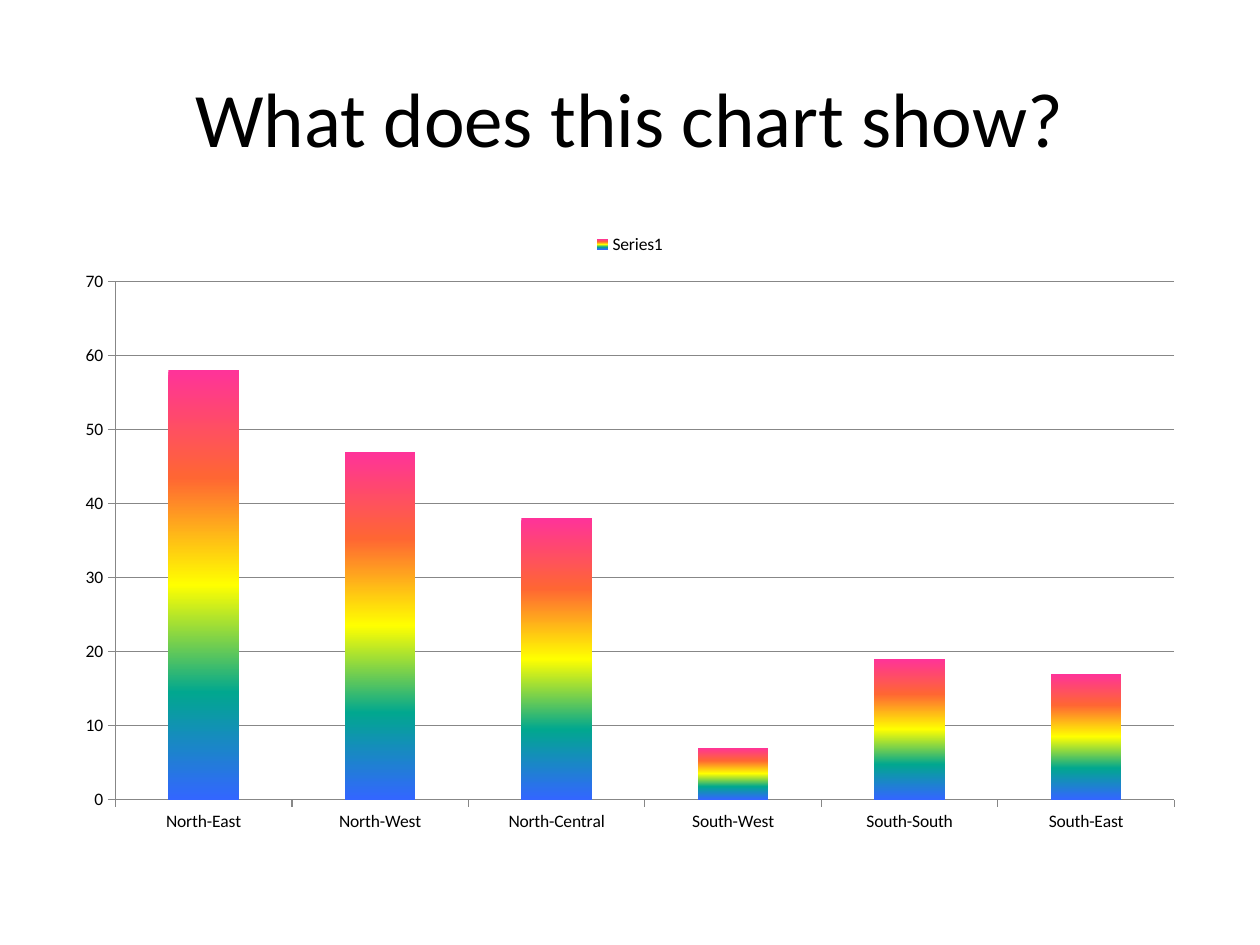
import pptx
import pptx.chart.data
import pptx.dml.color
import pptx.enum.chart
import pptx.enum.text
import pptx.oxml
import pptx.oxml.ns
import pptx.util
from pptx.util import Inches

FONT = "Calibri"
BLACK = "000000"
AXIS_GREY = "878787"
RAINBOW = ["FF3399", "FF6633", "FFFF00", "01A78F", "3366FF"]
REGION_VALUES = {
    "North-East": 58,
    "North-West": 47,
    "North-Central": 38,
    "South-West": 7,
    "South-South": 19,
    "South-East": 17,
}


def color(hex_string):
    return pptx.dml.color.RGBColor.from_string(hex_string)


def style_font(font, size):
    font.name = FONT
    font.size = pptx.util.Pt(size)
    font.color.rgb = color(BLACK)


def style_line(line):
    line.color.rgb = color(AXIS_GREY)
    line.width = pptx.util.Pt(0.75)


def fill_rainbow(series):
    fill = series.format.fill
    fill.gradient()
    fill.gradient_angle = 270
    stops = series._element.find(".//" + pptx.oxml.ns.qn("a:gsLst"))
    for stop in list(stops):
        stops.remove(stop)
    step = 100000 // (len(RAINBOW) - 1)
    for index, hex_string in enumerate(RAINBOW):
        stops.append(pptx.oxml.parse_xml(
            f'<a:gs {pptx.oxml.ns.nsdecls("a")} pos="{index * step}">'
            f'<a:srgbClr val="{hex_string}"/></a:gs>'
        ))


def place_title(slide, left, top, width, height):
    title = slide.shapes.title
    title.left, title.top, title.width, title.height = left, top, width, height
    title.text_frame.text = "What does this chart show?"
    title.text_frame.vertical_anchor = pptx.enum.text.MSO_ANCHOR.MIDDLE
    heading = title.text_frame.paragraphs[0]
    heading.alignment = pptx.enum.text.PP_ALIGN.CENTER
    style_font(heading.font, 44)


def place_region_chart(slide, left, top, width, height):
    region_data = pptx.chart.data.CategoryChartData()
    region_data.categories = list(REGION_VALUES)
    region_data.add_series("Series1", list(REGION_VALUES.values()))
    chart = slide.shapes.add_chart(
        pptx.enum.chart.XL_CHART_TYPE.COLUMN_CLUSTERED,
        left, top, width, height, region_data,
    ).chart
    style_font(chart.font, 10)
    chart.has_title = False

    chart.has_legend = True
    chart.legend.position = pptx.enum.chart.XL_LEGEND_POSITION.TOP
    chart.legend.include_in_layout = False

    columns = chart.plots[0]
    columns.gap_width = 150
    columns.vary_by_categories = False
    fill_rainbow(columns.series[0])

    for axis in (chart.category_axis, chart.value_axis):
        axis.major_tick_mark = pptx.enum.chart.XL_TICK_MARK.OUTSIDE
        axis.minor_tick_mark = pptx.enum.chart.XL_TICK_MARK.NONE
        style_line(axis.format.line)
    chart.value_axis.minimum_scale = 0
    chart.value_axis.maximum_scale = 70
    chart.value_axis.major_unit = 10
    chart.value_axis.has_major_gridlines = True
    style_line(chart.value_axis.major_gridlines.format.line)


def main():
    presentation = pptx.Presentation()
    presentation.slide_width = Inches(10)
    presentation.slide_height = Inches(7.5)
    slide = presentation.slides.add_slide(
        presentation.slide_layouts.get_by_name("Title Only")
    )
    place_title(slide, Inches(0.5), Inches(0.3), Inches(9), Inches(1.25))
    place_region_chart(slide, Inches(0.5), Inches(1.75), Inches(9), Inches(4.95))
    presentation.save("out.pptx")


if __name__ == "__main__":
    main()
